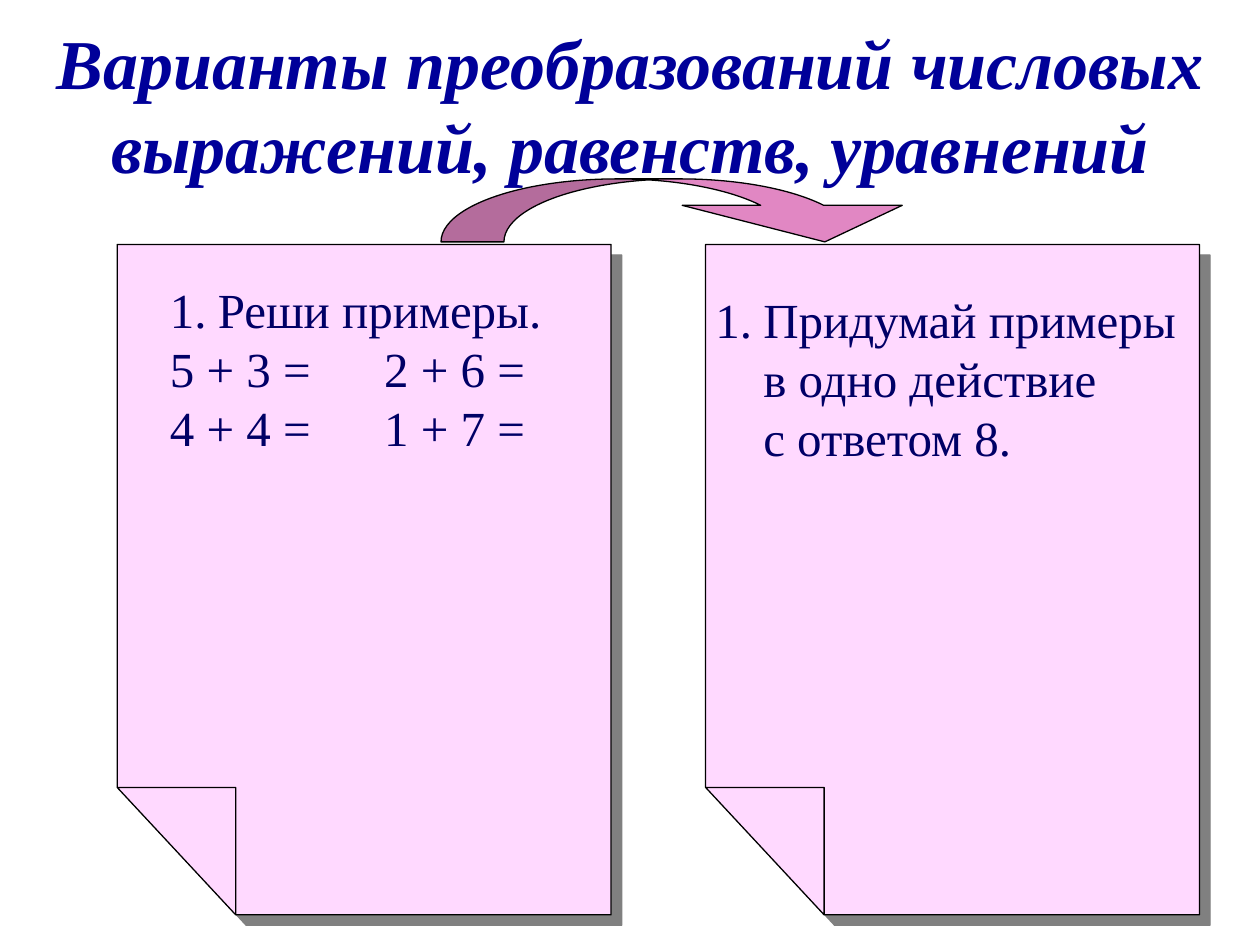
from pptx import Presentation, util as u
from pptx.dml.color import RGBColor
from pptx.enum import shapes, text
from pptx.oxml.ns import qn
from lxml import etree

FONT = "Times New Roman"
SHEET_W, SHEET_H = 3.92, 5.32
SHEET_TOP = 1.94
INDENT = 0.38


def rgb(value):
    return RGBColor.from_string(value)


def child(parent, tag, **attributes):
    return etree.SubElement(parent, qn(tag), {k: str(v) for k, v in attributes.items()})


def inches(*lengths):
    return [u.Inches(length) for length in lengths]


def paint(shape, fill):
    shape.shadow.inherit = False
    shape.fill.solid()
    shape.fill.fore_color.rgb = rgb(fill)
    shape.line.color.rgb = rgb("000000")
    shape.line.width = u.Pt(0.75)


def style(paragraph, size, color, emphasis=False):
    font = paragraph.font
    font.name, font.size = FONT, u.Pt(size)
    font.bold = font.italic = emphasis
    font.color.rgb = rgb(color)


def add_heading(slide, wording, box):
    title = slide.shapes.title
    title.left, title.top, title.width, title.height = inches(*box)
    frame = title.text_frame
    frame.word_wrap = True
    frame.auto_size = text.MSO_AUTO_SIZE.NONE
    frame.vertical_anchor = text.MSO_ANCHOR.MIDDLE
    frame.text = wording
    paragraph = frame.paragraphs[0]
    paragraph.alignment = text.PP_ALIGN.CENTER
    style(paragraph, 40, "000099", emphasis=True)


def add_sheet(slide, left, top, width, height):
    """Sheet of paper whose lower left corner is folded up."""
    right, bottom = left + width, top + height
    fold_x, fold_y = left + 0.24 * width, bottom - 0.19 * height
    outline = [(left, fold_y), (left, top), (right, top), (right, bottom),
               (fold_x, bottom), (fold_x, fold_y), (left, fold_y), (fold_x, fold_y)]
    builder = slide.shapes.build_freeform(*inches(fold_x, bottom))
    builder.add_line_segments([inches(*point) for point in outline])
    sheet = builder.convert_to_shape()
    paint(sheet, "FFD9FF")
    effects = sheet._element.spPr.find(qn("a:effectLst"))
    shadow = child(effects, "a:outerShdw", dist=u.Pt(8.5), dir=45 * 60000,
                   algn="ctr", rotWithShape=0)
    child(shadow, "a:srgbClr", val="808080")


def add_task(slide, box, task, examples=()):
    """Numbered task, followed by rows of examples in two columns."""
    frame = slide.shapes.add_textbox(*inches(*box)).text_frame
    frame.word_wrap = True
    frame.text = "\n".join([task, *examples])
    for number, paragraph in enumerate(frame.paragraphs):
        props = paragraph._p.get_or_add_pPr()
        if number == 0:
            props.set("marL", str(u.Inches(INDENT)))
            props.set("indent", str(u.Inches(-INDENT)))
            child(props, "a:buFont", typeface=FONT)
            child(props, "a:buAutoNum", type="arabicPeriod")
        else:
            tabs = child(props, "a:tabLst")
            child(tabs, "a:tab", pos=u.Inches(1.7), algn="l")
        style(paragraph, 28, "000066")


def add_arrow(slide, box):
    arrow = slide.shapes.add_shape(shapes.MSO_SHAPE.CURVED_DOWN_ARROW, *inches(*box))
    for index, value in enumerate((1.927, 3.493, 0.58)):
        arrow.adjustments[index] = value
    paint(arrow, "E187C3")


def main():
    deck = Presentation()
    deck.slide_width, deck.slide_height = inches(10, 7.5)
    slide = deck.slides.add_slide(deck.slide_layouts[5])

    add_heading(slide, "Варианты преобразований числовых выражений, равенств, уравнений",
                (0, 0.45, 10, 0.75))

    # Two sheets: given task and its transformed version
    for left in (0.93, 5.6):
        add_sheet(slide, left, SHEET_TOP, SHEET_W, SHEET_H)
    add_task(slide, (1.25, 2.17, 3.42, 2.44), "Реши примеры.",
             ("5 + 3 =\t2 + 6 =", "4 + 4 =\t1 + 7 ="))
    add_task(slide, (5.58, 2.25, 4, 1.97), "Придумай примеры в одно действие\vс ответом 8.")

    # Arrow from the first sheet to the second
    add_arrow(slide, (3.5, 1.42, SHEET_W, 0.5))

    deck.save("out.pptx")


if __name__ == "__main__":
    main()
